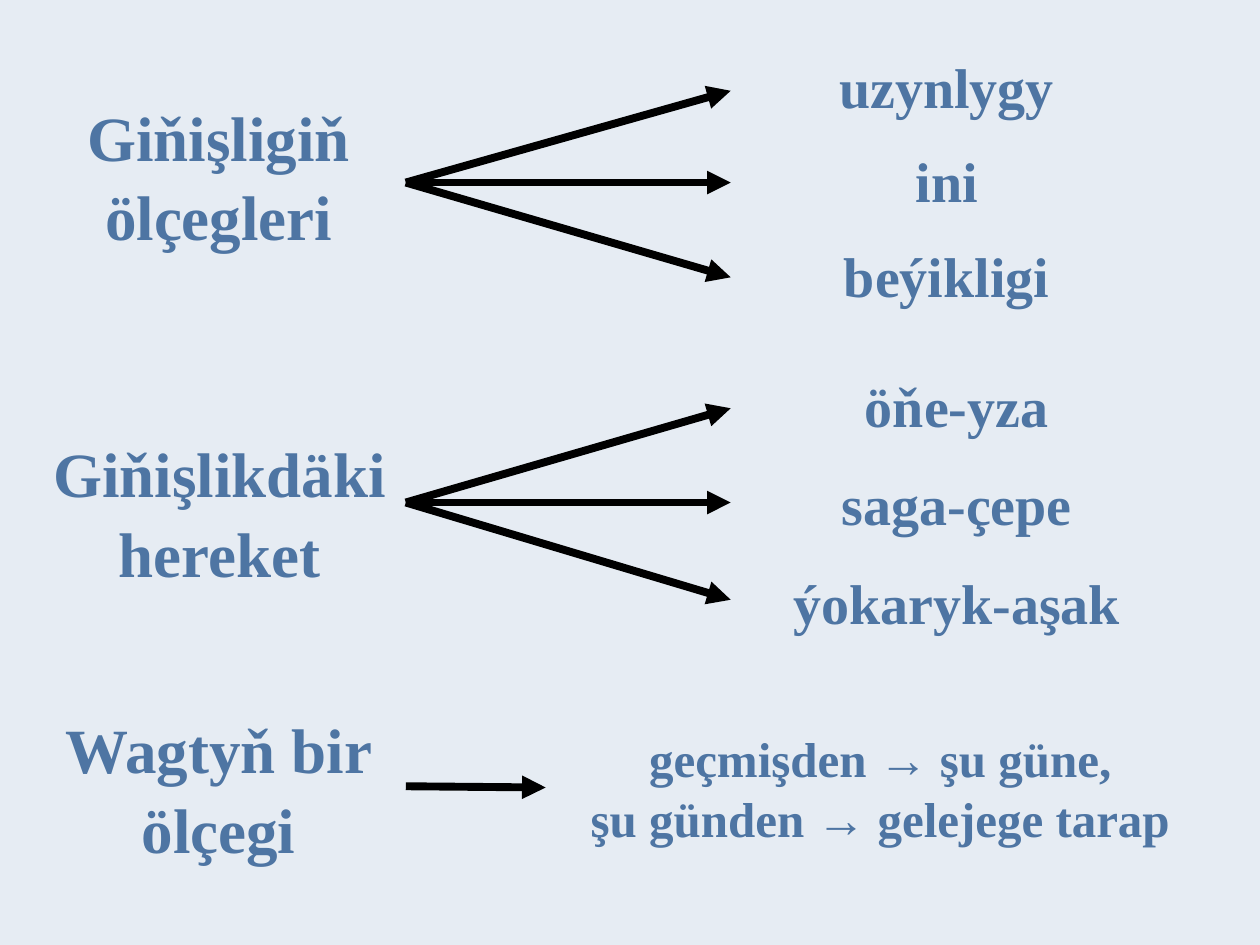
from dataclasses import dataclass

import pptx
import pptx.dml.color
import pptx.enum.shapes
import pptx.enum.text
import pptx.oxml
import pptx.oxml.ns
import pptx.util
from pptx.util import Cm

COLORS = {"background": "E6ECF3", "text": "4E75A3", "arrow": "000000"}
FONT = "Times New Roman"
ARROW_START = 8.18
ARROW_END = 14.73


@dataclass
class Label:
    lines: list[str]
    left: float
    top: float
    width: float
    height: float
    size: int
    line_spacing: float = 1.05


@dataclass
class Branching:
    heading: Label
    answers: list[Label]
    start_y: float
    end_ys: list[float]


def color(name: str) -> pptx.dml.color.RGBColor:
    return pptx.dml.color.RGBColor.from_string(COLORS[name])


def add_label(slide, label: Label):
    shape = slide.shapes.add_textbox(
        Cm(label.left), Cm(label.top), Cm(label.width), Cm(label.height)
    )
    text_frame = shape.text_frame
    text_frame.word_wrap = True
    text_frame.vertical_anchor = pptx.enum.text.MSO_ANCHOR.TOP
    text_frame.margin_top = Cm(0.13) + pptx.util.Pt(0.12 * label.size)
    text_frame.text = "\n".join(label.lines)
    for paragraph in text_frame.paragraphs:
        paragraph.alignment = pptx.enum.text.PP_ALIGN.CENTER
        paragraph.line_spacing = label.line_spacing
        for run in paragraph.runs:
            run.font.name = FONT
            run.font.size = pptx.util.Pt(label.size)
            run.font.bold = True
            run.font.color.rgb = color("text")
    return shape


def add_arrow(slide, start_y: float, end_y: float):
    connector = slide.shapes.add_connector(
        pptx.enum.shapes.MSO_CONNECTOR.STRAIGHT,
        Cm(ARROW_START), Cm(start_y), Cm(ARROW_END), Cm(end_y),
    )
    connector.line.color.rgb = color("arrow")
    connector.line.width = pptx.util.Pt(4.5)
    qn = pptx.oxml.ns.qn
    line = connector.line._get_or_add_ln()
    line.append(line.makeelement(qn("a:tailEnd"), {"type": "triangle"}))
    properties = connector._element.spPr
    properties.append(properties.makeelement(qn("a:effectLst"), {}))
    return connector


def add_branching(slide, branching: Branching) -> None:
    add_label(slide, branching.heading)
    for answer in branching.answers:
        add_label(slide, answer)
    for end_y in branching.end_ys:
        add_arrow(slide, branching.start_y, end_y)


def answer_column(
    words: list[str], left: float, top: float, width: float, height: float, step: float
) -> list[Label]:
    return [
        Label([word], left, top + index * step, width, height, 32)
        for index, word in enumerate(words)
    ]


BRANCHINGS = [
    Branching(
        Label(["Giňişligiň ölçegleri"], 0.89, 1.63, 7.04, 3.68, 36),
        answer_column(["uzynlygy", "ini", "beýikligi"], 14.88, 0.73, 8.41, 1.68, 1.9),
        3.68,
        [1.83, 3.68, 5.59],
    ),
    Branching(
        Label(["Giňişlikdäki hereket"], 0.71, 8.41, 7.44, 3.68, 36),
        answer_column(
            ["öňe-yza", "saga-çepe", "ýokaryk-aşak"], 14.07, 7.16, 10.44, 1.75, 1.98
        ),
        10.13,
        [8.23, 10.13, 12.09],
    ),
]
TIME_HEADING = Label(["Wagtyň bir ölçegi"], 0.76, 13.97, 7.29, 3.89, 36)
TIME_ANSWER = Label(
    ["geçmişden → şu güne,", "şu günden → gelejege tarap"],
    11, 14.4, 13.49, 2.95, 28, 1.03,
)


def main() -> None:
    presentation = pptx.Presentation()
    presentation.slide_width = Cm(25.4)
    presentation.slide_height = Cm(19.05)
    slide = presentation.slides.add_slide(presentation.slide_layouts[6])
    slide.background.fill.solid()
    slide.background.fill.fore_color.rgb = color("background")

    for branching in BRANCHINGS:
        add_branching(slide, branching)

    add_label(slide, TIME_HEADING)
    time_answer = add_label(slide, TIME_ANSWER)
    time_arrow = add_arrow(slide, 15.85, 15.85)
    time_arrow.end_connect(time_answer, 1)

    presentation.save("out.pptx")


if __name__ == "__main__":
    main()
